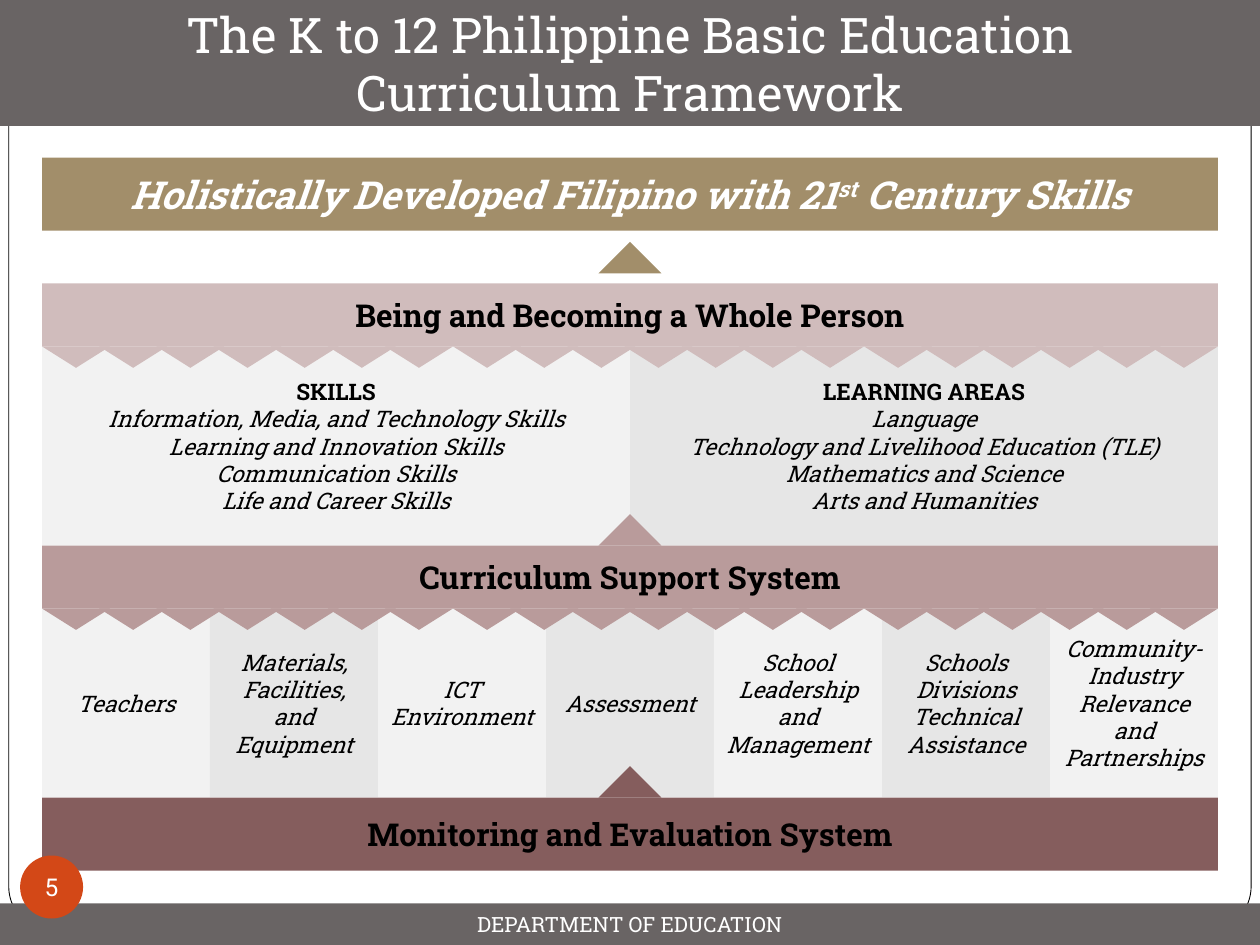
from pptx import Presentation
from pptx.dml.color import RGBColor
from pptx.enum.shapes import MSO_SHAPE
from pptx.enum.text import MSO_ANCHOR, PP_ALIGN
from pptx.util import Inches, Pt

RECTANGLE = MSO_SHAPE.RECTANGLE
ROUNDED = MSO_SHAPE.ROUNDED_RECTANGLE
TRIANGLE = MSO_SHAPE.ISOSCELES_TRIANGLE
OVAL = MSO_SHAPE.OVAL
MIDDLE = MSO_ANCHOR.MIDDLE
CENTER = PP_ALIGN.CENTER

WHITE = RGBColor(0xFF, 0xFF, 0xFF)
BLACK = RGBColor(0x00, 0x00, 0x00)
GRAY = RGBColor(0x69, 0x64, 0x64)
LIGHT = RGBColor(0xF2, 0xF2, 0xF2)
SHADE = RGBColor(0xE6, 0xE6, 0xE6)
GOLD = RGBColor(0xA2, 0x8E, 0x6A)
PALE_ROSE = RGBColor(0xD0, 0xBC, 0xBC)
ROSE = RGBColor(0xB9, 0x9B, 0x9B)
DARK_ROSE = RGBColor(0x85, 0x5D, 0x5D)
ORANGE = RGBColor(0xD3, 0x48, 0x17)

LEFT = 1 / 3
WIDTH = 10 - 2 * LEFT
TOOTH_RUNS = (7, 7, 6)
TOOTH_WIDTH = 0.54
TOOTH_HEIGHT = 0.17

HEADING = {"size": Pt(18), "bold": True}
LIST_TITLE = {"size": Pt(13), "bold": True}
LIST_ITEM = {"size": Pt(13), "italic": True}
GOAL = {"size": Pt(22), "bold": True, "italic": True}

LISTS = [
    ("SKILLS", [
        "Information, Media, and Technology Skills",
        "Learning and Innovation Skills",
        "Communication Skills",
        "Life and Career Skills",
    ]),
    ("LEARNING AREAS", [
        "Language",
        "Technology and Livelihood Education (TLE)",
        "Mathematics and Science",
        "Arts and Humanities",
    ]),
]
SUPPORTS = [
    ["Teachers"],
    ["Materials, Facilities, and Equipment"],
    ["ICT", "Environment"],
    ["Assessment"],
    ["School Leadership and Management"],
    ["Schools Divisions Technical Assistance"],
    ["Community-Industry Relevance and Partnerships"],
]
HEADING_BANDS = [
    (6.33, 0.58, DARK_ROSE, "Monitoring and Evaluation System"),
    (4.33, 0.5, ROSE, "Curriculum Support System"),
    (2.25, 0.5, PALE_ROSE, "Being and Becoming a Whole Person"),
]


class FrameworkSlide:
    font = "Roboto Slab"

    def __init__(self, slide):
        self.slide = slide

    def shape(self, kind, left, top, width, height, fill, parent=None):
        shapes = (parent or self.slide).shapes
        shape = shapes.add_shape(
            kind, Inches(left), Inches(top), Inches(width), Inches(height))
        shape.shadow.inherit = False
        shape.fill.solid()
        shape.fill.fore_color.rgb = fill
        shape.line.fill.background()
        return shape

    def put_text(self, shape, paragraphs, color=BLACK, wrap=True):
        """Fill a shape with paragraphs, each a list of (text, format) runs."""
        frame = shape.text_frame
        frame.word_wrap = wrap
        frame.vertical_anchor = MIDDLE
        for index, runs in enumerate(paragraphs):
            paragraph = frame.add_paragraph() if index else frame.paragraphs[0]
            paragraph.alignment = CENTER
            for text, look in runs:
                run = paragraph.add_run()
                run.text = text
                run.font.color.rgb = color
                for name, value in {"name": self.font, **look}.items():
                    setattr(run.font, name, value)

    def band(self, top, height, fill, runs, color=BLACK):
        band = self.shape(RECTANGLE, LEFT, top, WIDTH, height, fill)
        self.put_text(band, [runs], color)
        return band

    def page_strip(self, top, height, text, size):
        self.shape(RECTANGLE, 0, top, 10, height, GRAY)
        label = self.slide.shapes.add_textbox(
            Inches(0.5), Inches(top), Inches(9), Inches(height))
        self.put_text(label, [[(text, {"size": Pt(size)})]], WHITE)

    def up_arrow(self, top, fill):
        self.shape(TRIANGLE, 4.75, top, 0.5, 0.25, fill)

    def teeth(self, top, fill):
        """Hang a zigzag edge of downward triangles below a band.

        Teeth overlap within a run, and the runs meet end to end.
        """
        group = self.slide.shapes.add_group_shape()
        steps = sum(TOOTH_RUNS) - len(TOOTH_RUNS)
        pitch = (WIDTH - len(TOOTH_RUNS) * TOOTH_WIDTH) / steps
        left = LEFT
        for count in TOOTH_RUNS:
            for index in range(count):
                tooth = self.shape(TRIANGLE, left + index * pitch, top,
                                   TOOTH_WIDTH, TOOTH_HEIGHT, fill, group)
                tooth.element.spPr.get_or_add_xfrm().set("flipV", "1")
            left += (count - 1) * pitch + TOOTH_WIDTH

    def page_number(self, number):
        badge = self.shape(OVAL, 0.16, 6.79, 0.5, 0.5, ORANGE)
        for side in ("left", "top", "right", "bottom"):
            setattr(badge.text_frame, f"margin_{side}", 0)
        look = {"size": Pt(14), "name": "Roboto"}
        self.put_text(badge, [[(number, look)]], WHITE, wrap=False)


def main():
    deck = Presentation()
    deck.slide_width, deck.slide_height = Inches(10), Inches(7.5)
    page = FrameworkSlide(deck.slides.add_slide(deck.slide_layouts[6]))

    border = page.shape(ROUNDED, 0.07, 0.08, 9.86, 7.32, WHITE)
    border.adjustments[0] = 0.05
    border.line.color.rgb = BLACK
    border.line.width = Pt(0.5)

    half = WIDTH / len(LISTS)
    for index, (title, items) in enumerate(LISTS):
        panel = page.shape(RECTANGLE, LEFT + index * half, 2.75, half, 1.58,
                           (LIGHT, SHADE)[index])
        page.put_text(panel, [[(title, LIST_TITLE)]]
                      + [[(item, LIST_ITEM)] for item in items])

    column = WIDTH / len(SUPPORTS)
    for index, lines in enumerate(SUPPORTS):
        cell = page.shape(RECTANGLE, LEFT + index * column, 4.83, column, 1.5,
                          (LIGHT, SHADE)[index % 2])
        page.put_text(cell, [[(line, LIST_ITEM)] for line in lines])

    page.page_strip(
        0, 1, "The K to 12 Philippine Basic Education Curriculum Framework", 28)
    page.page_strip(7.17, 0.33, "DEPARTMENT OF EDUCATION", 12)

    for top, height, fill, text in HEADING_BANDS:
        page.band(top, height, fill, [(text, HEADING)])
    page.up_arrow(6.08, DARK_ROSE)
    page.up_arrow(4.08, ROSE)

    goal = page.band(1.25, 0.58, GOLD, [
        ("Holistically Developed Filipino with 21", GOAL),
        ("st", GOAL),
        (" Century Skills", GOAL),
    ], WHITE)
    ordinal = goal.text_frame.paragraphs[0].runs[1]
    ordinal._r.get_or_add_rPr().set("baseline", "30000")

    page.teeth(4.83, ROSE)
    page.teeth(2.75, PALE_ROSE)
    page.up_arrow(1.92, GOLD)
    page.page_number("5")

    deck.save("out.pptx")


if __name__ == "__main__":
    main()
